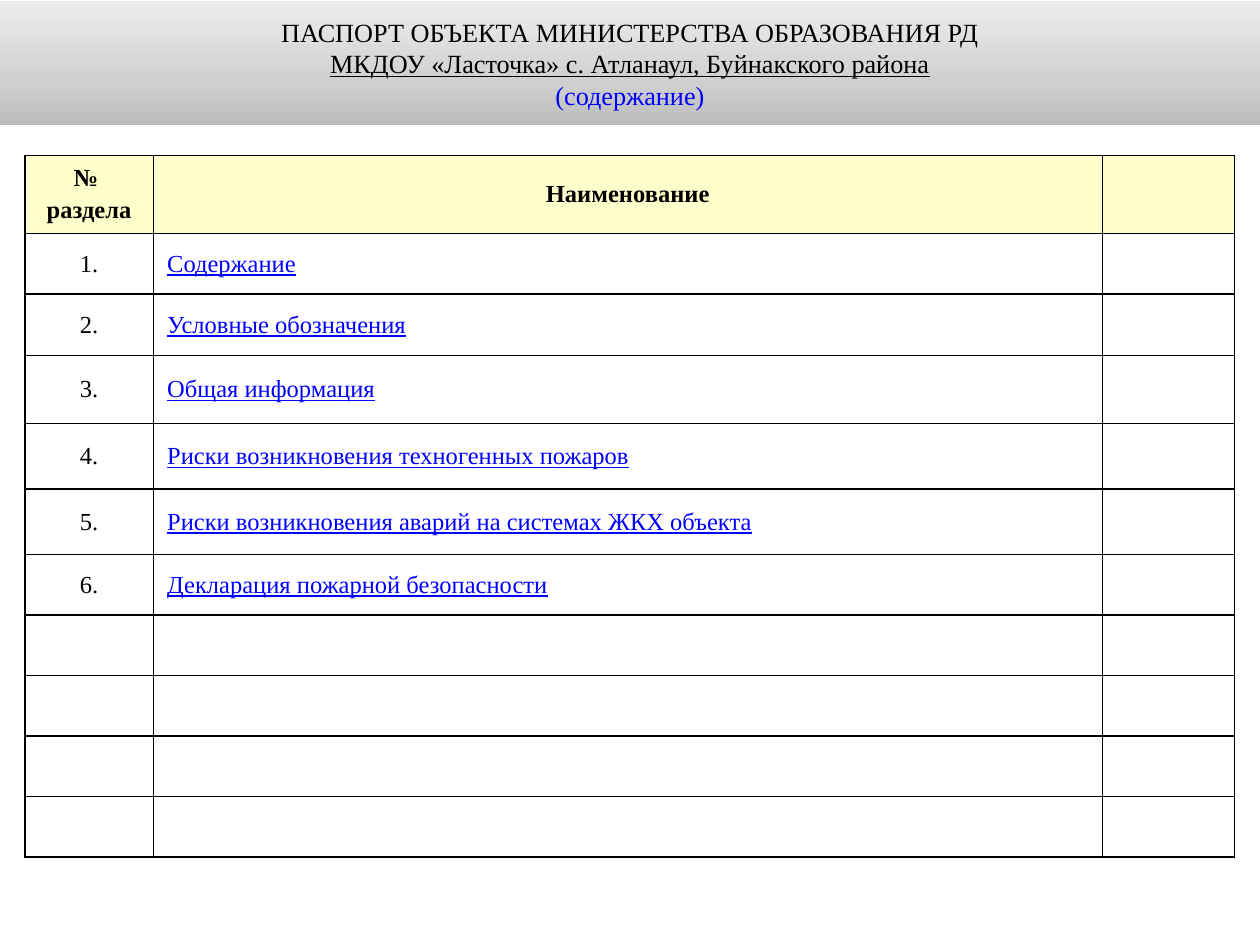
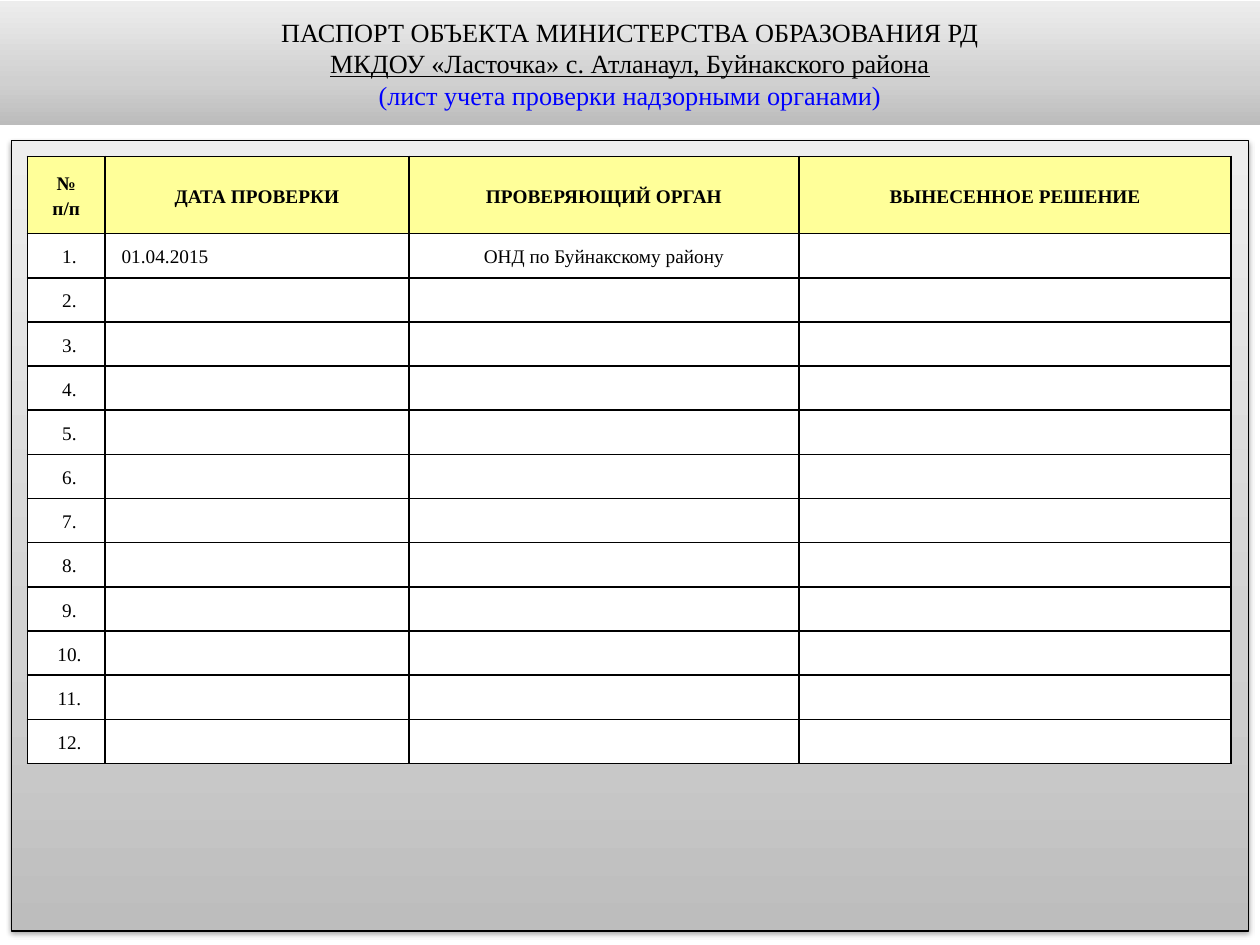
from dataclasses import dataclass

from lxml.etree import SubElement as Sub
from pptx import Presentation
from pptx.dml.color import RGBColor as Rgb
from pptx.enum.shapes import MSO_SHAPE as Shape
from pptx.enum.text import MSO_ANCHOR as Anchor, MSO_AUTO_SIZE as Fit, PP_ALIGN as Align
from pptx.oxml.ns import qn
from pptx.util import Cm, Pt


@dataclass(frozen=True)
class Theme:
    font: str = "Times New Roman"
    ink: str = "000000"
    link: str = "0000FF"
    paper: str = "FFFFFF"
    band: tuple = ((0, "BCBCBC"), (35, "D0D0D0"), (100, "EDEDED"))
    panel: tuple = ((0, "BDBDBD"), (35, "D1D1D1"), (100, "EEEEEE"))
    title: int = 15


THEME = Theme()

TITLE = ("ПАСПОРТ ОБЪЕКТА МИНИСТЕРСТВА ОБРАЗОВАНИЯ РД",
         "МКДОУ «Ласточка» с. Атланаул, Буйнакского района")

TOPICS = ["Содержание", "Условные обозначения", "Общая информация",
          "Риски возникновения техногенных пожаров",
          "Риски возникновения аварий на системах ЖКХ объекта",
          "Декларация пожарной безопасности"]
SPARE = 4
CHECKS = [("01.04.2015", "ОНД по Буйнакскому району")]
CHECK_ROWS = 12

# Lengths in cm, type sizes in points
INDEX = dict(
    left=0.5, top=3.13, cols=(2.59, 19.13, 2.67),
    rows=[1.58, 1.22, 1.24, 1.37, 1.32, 1.32] + [1.22] * (1 + SPARE),
    head=["№ \nраздела", "Наименование", ""],
    body=[(f"{n}.", topic, "") for n, topic in enumerate(TOPICS, 1)]
         + [("", "", "")] * SPARE,
    tint="FFFFCC", size=14, inset=(0.28, 0.13), lead=1.0, before=2.8,
    link_col=1, left_col=1, shift={})

LOG = dict(
    left=0.55, top=3.15, cols=(1.57, 6.12, 7.87, 8.71),
    rows=[1.56] + [0.89] * CHECK_ROWS,
    head=["№\nп/п", "ДАТА ПРОВЕРКИ", "ПРОВЕРЯЮЩИЙ ОРГАН", "ВЫНЕСЕННОЕ РЕШЕНИЕ"],
    body=[(f"{n}.", *(CHECKS[n - 1] if n <= len(CHECKS) else ("", "")), "")
          for n in range(1, CHECK_ROWS + 1)],
    tint="FFFF99", size=11, inset=(0.08, 0), lead=1.15, before=0,
    link_col=None, left_col=1, shift={0: 0.13, 1: 0.25})


def style(par, size, color=THEME.ink, bold=False, under=False):
    for run in par.runs:
        font = run.font
        font.name, font.size = THEME.font, Pt(size)
        font.bold, font.underline = bold, under
        font.color.rgb = Rgb.from_string(color)


def shade(shape, stops):
    """Fill with a gradient that runs from the bottom up."""
    shape.fill.gradient()
    shape.fill.gradient_angle = 90
    group = shape._element.spPr.find(".//" + qn("a:gsLst"))
    for stop in list(group):
        group.remove(stop)
    for pos, color in stops:
        stop = Sub(group, qn("a:gs"), pos=str(pos * 1000))
        Sub(stop, qn("a:srgbClr"), val=color)


def place(shape, left, top, width, height):
    shape.left, shape.top = Cm(left), Cm(top)
    shape.width, shape.height = Cm(width), Cm(height)


def add_page(deck, topic):
    page = deck.slides.add_slide(deck.slide_layouts[5])
    band = page.shapes.title
    place(band, 0, 0.03, 25.4, 2.49)
    shade(band, THEME.band)
    frame = band.text_frame
    frame.text = "\n".join((*TITLE, f"({topic})"))
    frame.word_wrap, frame.auto_size = True, Fit.NONE
    frame.vertical_anchor = Anchor.MIDDLE
    looks = ({}, {"under": True}, {"color": THEME.link})
    for par, look in zip(frame.paragraphs, looks):
        par.alignment = Align.CENTER
        par.space_before = Pt(0)
        style(par, THEME.title, **look)
    return page


def add_panel(page):
    panel = page.shapes.add_shape(Shape.RECTANGLE, 0, 0, 0, 0)
    place(panel, 0.23, 2.84, 24.94, 15.93)
    shade(panel, THEME.panel)
    panel.line.color.rgb = Rgb.from_string(THEME.ink)
    panel.line.width = Pt(0.75)
    panel.shadow.inherit = False
    glow = panel._element.spPr.find(qn("a:effectLst"))
    cast = Sub(glow, qn("a:outerShdw"), blurRad=str(Pt(3.1)), dist=str(Pt(1.6)),
               dir="5400000", rotWithShape="0")
    tone = Sub(cast, qn("a:srgbClr"), val=THEME.ink)
    Sub(tone, qn("a:alpha"), val="38000")


def frame_cell(cell, fill):
    """Draw the four borders, then the fill."""
    props = cell._tc.get_or_add_tcPr()
    for side in ("lnL", "lnR", "lnT", "lnB"):
        line = Sub(props, qn("a:" + side), w=str(Pt(1)))
        Sub(Sub(line, qn("a:solidFill")), qn("a:srgbClr"), val=THEME.ink)
    cell.fill.solid()
    cell.fill.fore_color.rgb = Rgb.from_string(fill)


def add_grid(page, plan):
    cols, rows = plan["cols"], plan["rows"]
    box = [Cm(v) for v in (plan["left"], plan["top"], sum(cols), sum(rows))]
    grid = page.shapes.add_table(len(rows), len(cols), *box).table
    grid.first_row = grid.horz_banding = False
    for col, width in zip(grid.columns, cols):
        col.width = Cm(width)
    for row, height in zip(grid.rows, rows):
        row.height = Cm(height)
    side, edge = (Cm(v) for v in plan["inset"])
    for r, texts in enumerate([plan["head"], *plan["body"]]):
        head = r == 0
        for c, text in enumerate(texts):
            cell = grid.cell(r, c)
            frame_cell(cell, plan["tint"] if head else THEME.paper)
            cell.margin_left = cell.margin_right = side
            cell.margin_top = cell.margin_bottom = edge
            cell.vertical_anchor = Anchor.MIDDLE
            if not text:
                continue
            cell.text_frame.text = text
            link = not head and c == plan["link_col"]
            flush = not head and c == plan["left_col"]
            for par in cell.text_frame.paragraphs:
                par.alignment = Align.LEFT if flush else Align.CENTER
                par.line_spacing = plan["lead"]
                if head:
                    par.space_before = Pt(plan["before"])
                elif c in plan["shift"]:
                    par._p.get_or_add_pPr().set("marL", str(Cm(plan["shift"][c])))
                style(par, plan["size"], THEME.link if link else THEME.ink, head, link)


def main():
    deck = Presentation()
    deck.slide_width, deck.slide_height = Cm(25.4), Cm(19.05)
    add_grid(add_page(deck, "содержание"), INDEX)
    page = add_page(deck, "лист учета проверки надзорными органами")
    add_panel(page)
    add_grid(page, LOG)
    deck.save("out.pptx")


if __name__ == "__main__":
    main()
